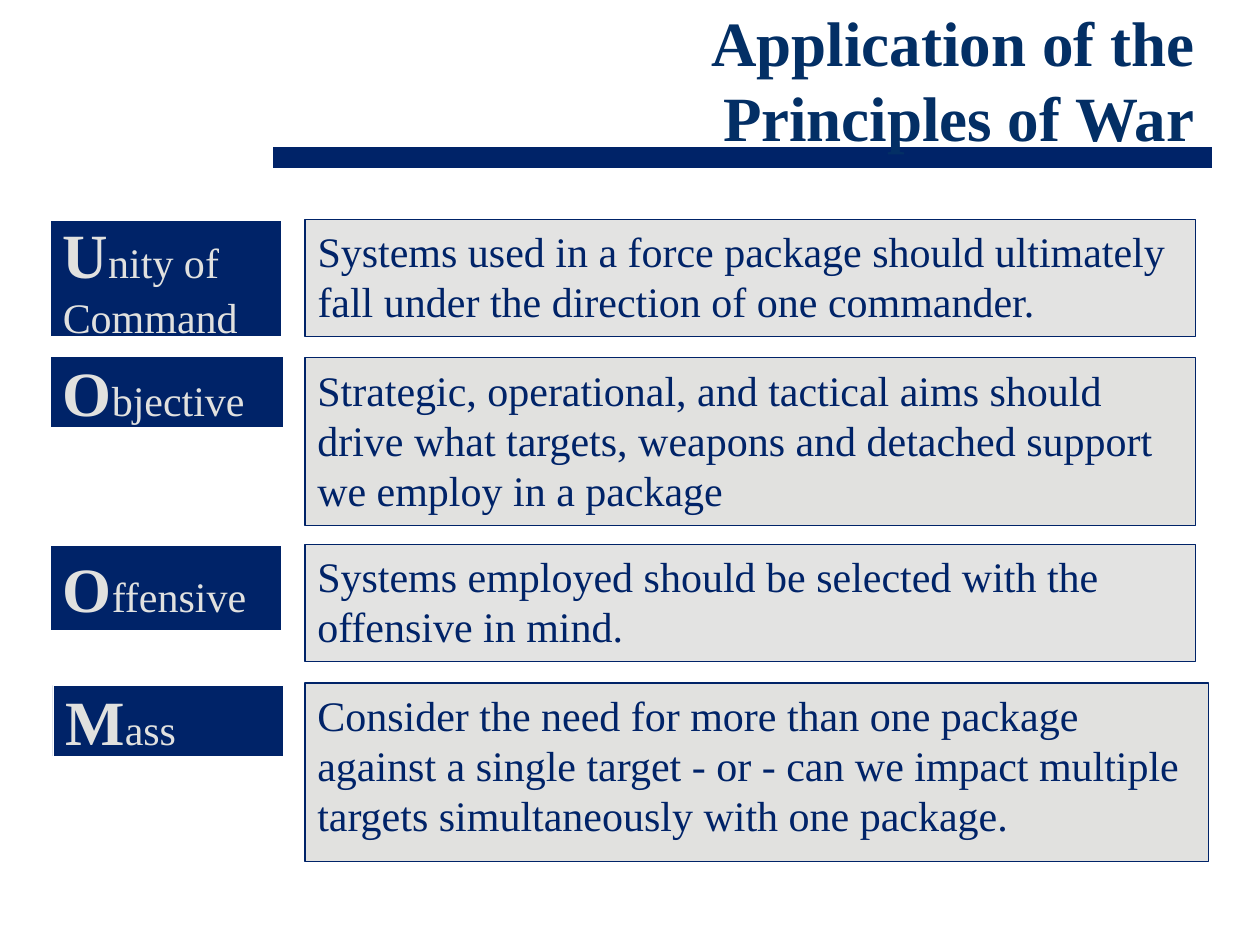
from lxml.etree import SubElement
from pptx import Presentation
from pptx.dml.color import RGBColor
from pptx.enum.shapes import MSO_CONNECTOR, MSO_SHAPE
from pptx.enum.text import MSO_ANCHOR, MSO_AUTO_SIZE, PP_ALIGN
from pptx.oxml.ns import qn
from pptx.util import Inches, Pt

COLORS = {
    "navy": "002368",
    "title": "032F65",
    "pale": "E1E1DF",
    "grey": "C8C8C6",
    "white": "FFFFFF",
}
FONT = "Times New Roman"
TITLE = ["Application of the", "Principles of War"]
PRINCIPLES = [
    {"name": "Unity of Command",
     "label": (0.4, 1.75, 1.83, 0.92), "box": (2.42, 1.74, 7.07, 0.93), "sheer": True,
     "meaning": "Systems used in a force package should ultimately fall under "
                "the direction of one commander."},
    {"name": "Objective",
     "label": (0.4, 2.83, 1.85, 0.56), "box": (2.42, 2.84, 7.07, 1.33), "sheer": False,
     "meaning": "Strategic, operational, and tactical aims should drive what targets, "
                "weapons and detached support we employ in a package"},
    {"name": "Offensive",
     "label": (0.4, 4.33, 1.83, 0.67), "box": (2.42, 4.32, 7.07, 0.93), "sheer": True,
     "meaning": "Systems employed should be selected with the offensive in mind."},
    {"name": "Mass",
     "label": (0.42, 5.44, 1.83, 0.56), "box": (2.42, 5.42, 7.17, 1.42), "sheer": False,
     "meaning": "Consider the need for more than one package against a single target "
                "- or - can we impact multiple targets simultaneously with one package."},
]


def color(name):
    return RGBColor.from_string(COLORS[name])


def place(shape, area):
    shape.left, shape.top, shape.width, shape.height = map(Inches, area)


def paint(shape, fill, line, width):
    shape.fill.solid()
    shape.fill.fore_color.rgb = color(fill)
    shape.line.color.rgb = color(line)
    shape.line.width = Pt(width)


def prepare_text(shape, anchor, align):
    frame = shape.text_frame
    frame.word_wrap = True
    frame.auto_size = MSO_AUTO_SIZE.NONE
    frame.vertical_anchor = anchor
    paragraph = frame.paragraphs[0]
    paragraph.alignment = align
    paragraph.space_before = Pt(0)
    return paragraph


def add_run(paragraph, text, size, tone, bold=False):
    run = paragraph.add_run()
    run.text = text
    run.font.name = FONT
    run.font.size = Pt(size)
    run.font.bold = bold
    run.font.color.rgb = color(tone)


def add_rectangle(slide, area):
    rectangle = slide.shapes.add_shape(MSO_SHAPE.RECTANGLE, *map(Inches, area))
    rectangle.shadow.inherit = False
    return rectangle


def add_rule(slide):
    rule = slide.shapes.add_connector(
        MSO_CONNECTOR.STRAIGHT, Inches(2.17), Inches(1.25), Inches(9.62), Inches(1.25))
    rule.line.color.rgb = color("navy")
    rule.line.width = Pt(12.25)
    SubElement(rule._element.spPr, qn("a:effectLst"))
    slide.shapes._spTree.insert(2, rule._element)


def add_title(slide):
    title = slide.shapes.title
    place(title, (0.58, 0, 9, 1.25))
    paragraph = prepare_text(title, MSO_ANCHOR.MIDDLE, PP_ALIGN.RIGHT)
    for index, line in enumerate(TITLE):
        if index:
            paragraph.add_line_break()
        add_run(paragraph, line, 36, "title", True)


def add_label(slide, principle):
    label = add_rectangle(slide, principle["label"])
    paint(label, "navy", "white", 0.25)
    paragraph = prepare_text(label, MSO_ANCHOR.MIDDLE, PP_ALIGN.LEFT)
    add_run(paragraph, principle["name"][0], 36, "pale", True)
    add_run(paragraph, principle["name"][1:], 24, "pale")


def fill_meaning(meaning, principle):
    paint(meaning, "grey" if principle["sheer"] else "pale", "navy", 0.75)
    if principle["sheer"]:
        tint = meaning._element.spPr.find(qn("a:solidFill"))[0]
        SubElement(tint, qn("a:alpha"), val="50000")
    paragraph = prepare_text(meaning, MSO_ANCHOR.TOP, PP_ALIGN.LEFT)
    properties = paragraph._p.get_or_add_pPr()
    properties.set("marL", "0")
    properties.set("indent", "0")
    SubElement(properties, qn("a:buNone"))
    add_run(paragraph, principle["meaning"], 24, "navy")


def main():
    deck = Presentation()
    deck.slide_width, deck.slide_height = Inches(10), Inches(7.5)
    slide = deck.slides.add_slide(deck.slide_layouts[1])
    add_rule(slide)
    add_title(slide)
    for index, principle in enumerate(PRINCIPLES):
        if index:
            meaning = add_rectangle(slide, principle["box"])
        else:
            meaning = slide.placeholders[1]
            place(meaning, principle["box"])
        fill_meaning(meaning, principle)
        add_label(slide, principle)
    deck.save("out.pptx")


if __name__ == "__main__":
    main()
